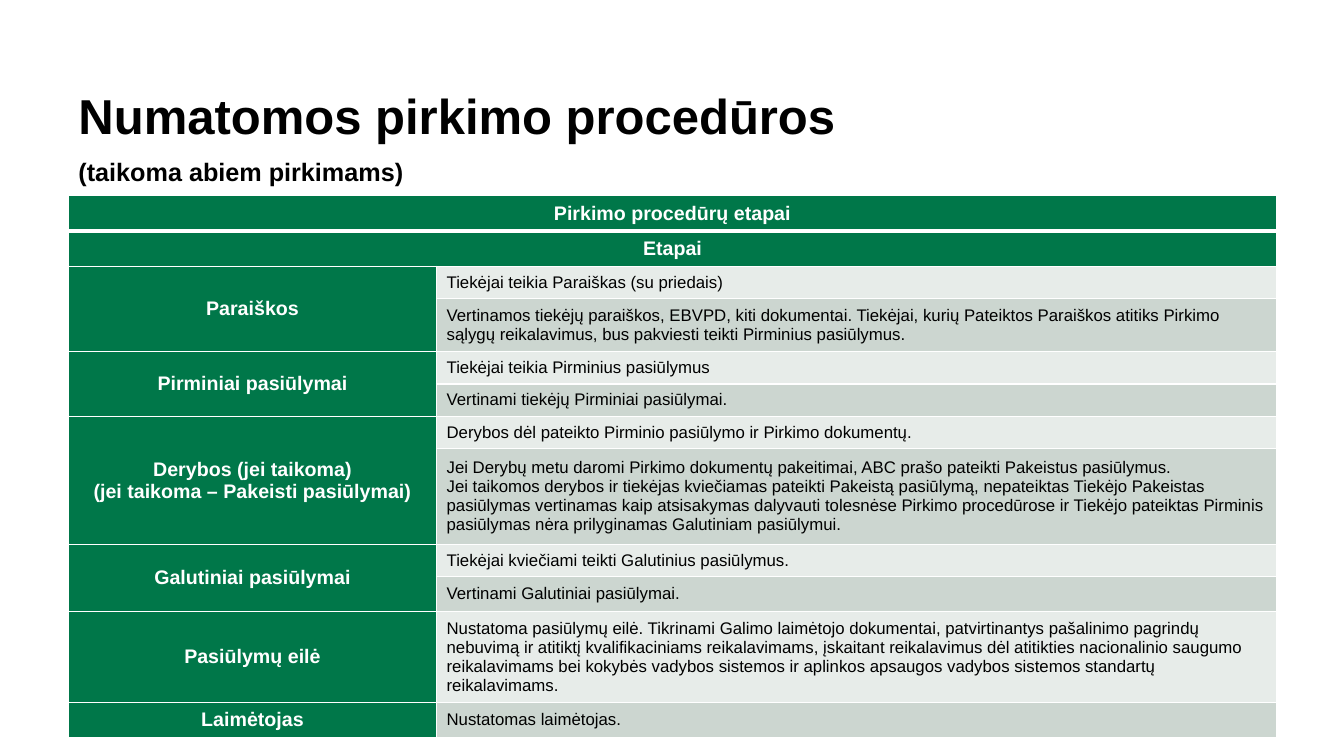
import pptx
import pptx.util
import pptx.dml.color
import pptx.enum.text
import pptx.oxml.ns
from lxml import etree

Inches, Pt = pptx.util.Inches, pptx.util.Pt
PP_ALIGN = pptx.enum.text.PP_ALIGN
MIDDLE = pptx.enum.text.MSO_ANCHOR.MIDDLE

GREEN, WHITE, BLACK = "007749", "FFFFFF", "000000"
BANDS = ["E7ECE9", "CCD6D0"]
FONT = "Arial"

TITLE = [("Numatomos pirkimo procedūros", 35), ("(taikoma abiem pirkimams)", 18)]
HEADERS = ["Pirkimo procedūrų etapai", "Etapai"]
HEADER_HEIGHT = 0.35
COLUMN_WIDTHS = [3.65, 8.33]

# Each stage: name, then its steps as (row height, text)
STAGES = [
    ("Paraiškos", [
        (0.32, "Tiekėjai teikia Paraiškas (su priedais)"),
        (0.53, "Vertinamos tiekėjų paraiškos, EBVPD, kiti dokumentai. Tiekėjai, kurių Pateiktos "
               "Paraiškos atitiks Pirkimo sąlygų reikalavimus, bus pakviesti teikti Pirminius "
               "pasiūlymus."),
    ]),
    ("Pirminiai pasiūlymai", [
        (0.32, "Tiekėjai teikia Pirminius pasiūlymus"),
        (0.32, "Vertinami tiekėjų Pirminiai pasiūlymai."),
    ]),
    ("Derybos (jei taikoma)\n(jei taikoma – Pakeisti pasiūlymai)", [
        (0.32, "Derybos dėl pateikto Pirminio pasiūlymo ir Pirkimo dokumentų."),
        (0.95, "Jei Derybų metu daromi Pirkimo dokumentų pakeitimai, ABC prašo pateikti Pakeistus "
               "pasiūlymus.\n"
               "Jei taikomos derybos ir tiekėjas kviečiamas pateikti Pakeistą pasiūlymą, "
               "nepateiktas Tiekėjo Pakeistas pasiūlymas vertinamas kaip atsisakymas dalyvauti "
               "tolesnėse Pirkimo procedūrose ir Tiekėjo pateiktas Pirminis pasiūlymas nėra "
               "prilyginamas Galutiniam pasiūlymui."),
    ]),
    ("Galutiniai pasiūlymai", [
        (0.32, "Tiekėjai kviečiami teikti Galutinius pasiūlymus."),
        (0.35, "Vertinami Galutiniai pasiūlymai."),
    ]),
    ("Pasiūlymų eilė", [
        (0.85, "Nustatoma pasiūlymų eilė. Tikrinami Galimo laimėtojo dokumentai, patvirtinantys "
               "pašalinimo pagrindų nebuvimą ir atitiktį kvalifikaciniams reikalavimams, "
               "įskaitant reikalavimus dėl atitikties nacionalinio saugumo reikalavimams bei "
               "kokybės vadybos sistemos ir aplinkos apsaugos vadybos sistemos standartų "
               "reikalavimams."),
    ]),
    ("Laimėtojas", [(0.35, "Nustatomas laimėtojas.")]),
]


def rgb(color):
    return pptx.dml.color.RGBColor.from_string(color)


def style_text(p, size, color, bold):
    for r in p.runs:
        r.font.name = FONT
        r.font.size = Pt(size)
        r.font.bold = bold
        r.font.color.rgb = rgb(color)


def add_borders(cell, **widths):
    """Draw white borders, 1 pt unless a side (L, R, T, B) is given a width."""
    tcPr = cell._tc.get_or_add_tcPr()
    qn = pptx.oxml.ns.qn
    for side in "LRTB":
        ln = etree.SubElement(tcPr, qn("a:ln" + side), w=str(Pt(widths.get(side, 1))))
        fill = etree.SubElement(ln, qn("a:solidFill"))
        etree.SubElement(fill, qn("a:srgbClr"), val=WHITE)


def paint(cell, color):
    cell.fill.solid()
    cell.fill.fore_color.rgb = rgb(color)


def write(cell, text, heading):
    cell.vertical_anchor = MIDDLE
    cell.text_frame.text = text
    for p in cell.text_frame.paragraphs:
        p.alignment = PP_ALIGN.CENTER if heading else PP_ALIGN.LEFT
        style_text(p, 14 if heading else 12, WHITE if heading else BLACK, heading)


prs = pptx.Presentation()
prs.slide_width, prs.slide_height = Inches(13.33), Inches(7.5)
s = prs.slides.add_slide(prs.slide_layouts[6])

tf = s.shapes.add_textbox(Inches(0.68), Inches(0.87), Inches(8.99), Inches(0.76)).text_frame
tf.word_wrap = True
tf.text = "\n".join(text for text, size in TITLE)
for p, (text, size) in zip(tf.paragraphs, TITLE):
    p.line_spacing = 0.9
    style_text(p, size, BLACK, True)
tf.paragraphs[1].space_before = Pt(10)

steps = [step for name, stage_steps in STAGES for step in stage_steps]
heights = [HEADER_HEIGHT] * len(HEADERS) + [height for height, text in steps]
table = s.shapes.add_table(len(heights), len(COLUMN_WIDTHS), Inches(0.68), Inches(1.94),
                           Inches(sum(COLUMN_WIDTHS)), Inches(sum(heights))).table
for column, width in zip(table.columns, COLUMN_WIDTHS):
    column.width = Inches(width)

for i, (row, height) in enumerate(zip(table.rows, heights)):
    row.height = Inches(height)
    thick = {0: {"B": 3}, 1: {"T": 3}}.get(i, {})
    for j, cell in enumerate(row.cells):
        add_borders(cell, **thick)
        paint(cell, GREEN if j == 0 or i < len(HEADERS) else BANDS[i % 2])

for i, header in enumerate(HEADERS):
    table.cell(i, 0).merge(table.cell(i, 1))
    write(table.cell(i, 0), header, True)

i = len(HEADERS)
for name, stage_steps in STAGES:
    if len(stage_steps) > 1:
        table.cell(i, 0).merge(table.cell(i + len(stage_steps) - 1, 0))
    write(table.cell(i, 0), name, True)
    for height, text in stage_steps:
        write(table.cell(i, 1), text, False)
        i += 1

prs.save("out.pptx")
